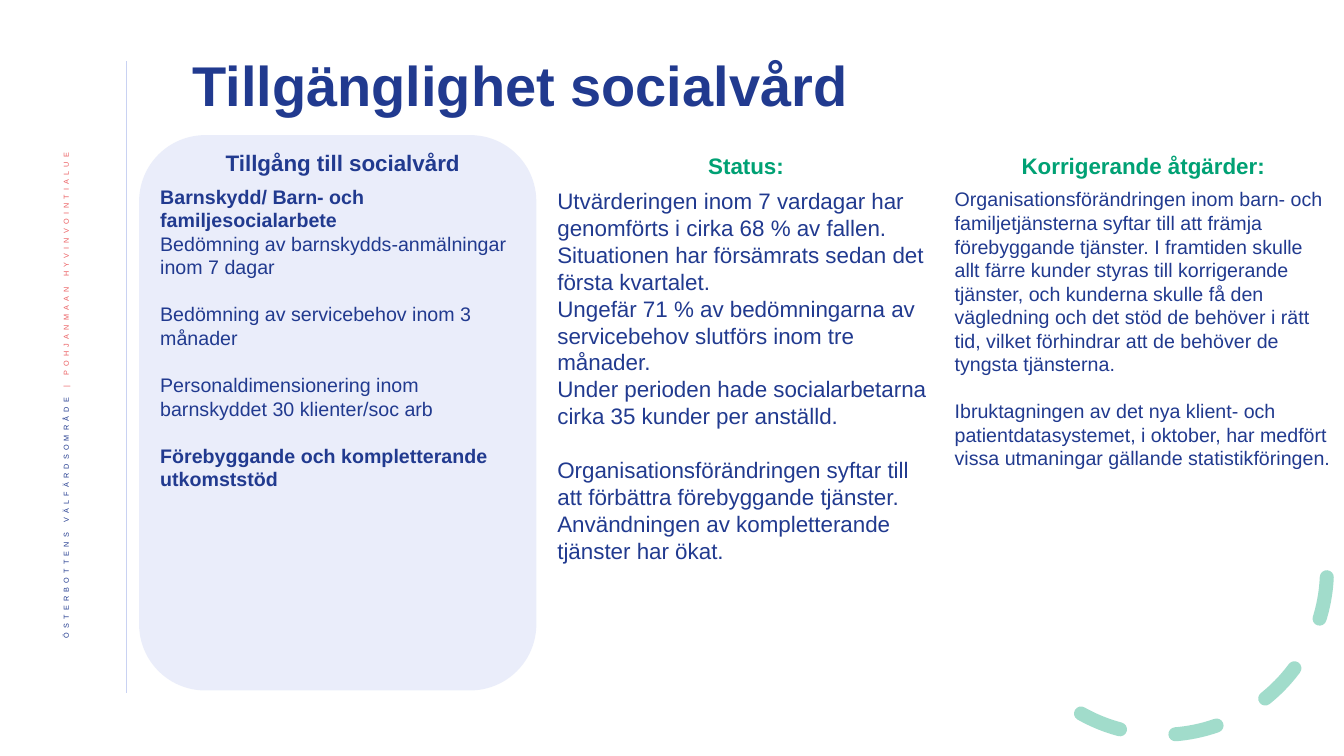
"""Build the slide on access to social care."""
import pptx
import pptx.util
import pptx.dml.color
import pptx.enum.dml
import pptx.enum.shapes
import pptx.enum.text
import pptx.oxml.ns
import lxml.etree

WIDTH, HEIGHT = 13.33, 7.5
NAVY, GREEN, CORAL, LAVENDER = "213A8F", "00A174", "EB5C5F", "C9D2F2"
ALIGN = pptx.enum.text.PP_ALIGN
ANCHOR = pptx.enum.text.MSO_ANCHOR
SHAPES = pptx.enum.shapes.MSO_SHAPE

TITLE = "Tillgänglighet socialvård"
SIDE_LABEL = [("ÖSTERBOTTENS VÄLFÄRDSOMRÅDE ", NAVY), ("| POHJANMAAN HYVINVOINTIALUE", CORAL)]
COLUMN_LEFT, COLUMN_TOP, COLUMN_WIDTH = 1.49, 1.46, 3.94
COLUMNS = [
    {
        "heading": "Tillgång till socialvård", "color": NAVY, "spacing": 0.9,
        "size": 14, "width": 3.82, "height": 3.73,
        "body": [
            ("Barnskydd/ Barn- och familjesocialarbete", "bold"),
            ("Bedömning av barnskydds-anmälningar inom 7 dagar", ""),
            ("Bedömning av servicebehov inom 3 månader", "gap"),
            ("Personaldimensionering inom barnskyddet 30 klienter/soc arb", "gap"),
            ("Förebyggande och kompletterande utkomststöd", "bold gap"),
        ],
    },
    {
        "heading": "Status:", "color": GREEN, "spacing": 1.0,
        "size": 16, "width": COLUMN_WIDTH, "height": 4.22,
        "body": [
            ("Utvärderingen inom 7 vardagar har genomförts i cirka 68 % av fallen. "
             "Situationen har försämrats sedan det första kvartalet.", ""),
            ("Ungefär 71 % av bedömningarna av servicebehov slutförs inom tre månader.", ""),
            ("Under perioden hade socialarbetarna cirka 35 kunder per anställd.", ""),
            ("Organisationsförändringen syftar till att förbättra förebyggande tjänster. "
             "Användningen av kompletterande tjänster har ökat.", "gap"),
        ],
    },
    {
        "heading": "Korrigerande åtgärder:", "color": GREEN, "spacing": 1.0,
        "size": 14, "width": COLUMN_WIDTH, "height": 3.28,
        "body": [
            ("Organisationsförändringen inom barn- och familjetjänsterna syftar till att främja "
             "förebyggande tjänster. I framtiden skulle allt färre kunder styras till korrigerande "
             "tjänster, och kunderna skulle få den vägledning och det stöd de behöver i rätt tid, "
             "vilket förhindrar att de behöver de tyngsta tjänsterna.", ""),
            ("Ibruktagningen av det nya klient- och patientdatasystemet, i oktober, har medfört "
             "vissa utmaningar gällande statistikföringen.", "gap"),
        ],
    },
]


def inches(*lengths):
    """Convert lengths in inches."""
    return [pptx.util.Inches(length) for length in lengths]


def rgb(color):
    """Turn a hex string into a colour."""
    return pptx.dml.color.RGBColor.from_string(color)


def add_run(paragraph, text, size=14, color=NAVY, bold=False):
    """Add a formatted run to a paragraph."""
    run = paragraph.add_run()
    run.text = text
    run.font.name = "Arial"
    run.font.size = pptx.util.Pt(size)
    run.font.bold = bold
    run.font.color.rgb = rgb(color)
    return run


def add_text(frame, text, align=ALIGN.LEFT, spacing=1.0, before=0, after=0, **font):
    """Write a paragraph, using the first one while the frame is empty."""
    paragraph = frame.add_paragraph() if frame.text else frame.paragraphs[0]
    paragraph.alignment = align
    paragraph.line_spacing = spacing
    paragraph.space_before = pptx.util.Pt(before)
    paragraph.space_after = pptx.util.Pt(after)
    add_run(paragraph, text, **font)


def set_alpha(shape, percent):
    """Make the first colour of a shape partly transparent."""
    color = next(shape._element.spPr.iter(pptx.oxml.ns.qn("a:srgbClr")))
    alpha = lxml.etree.SubElement(color, pptx.oxml.ns.qn("a:alpha"))
    alpha.set("val", str(percent * 1000))


def add_divider(slide):
    """Draw the thin vertical line beside the content."""
    divider = slide.shapes.add_connector(
        pptx.enum.shapes.MSO_CONNECTOR.STRAIGHT, *inches(1.25, 0.61, 1.25, 6.88))
    divider.line.color.rgb = rgb(LAVENDER)
    divider.line.width = pptx.util.Pt(0.5)
    lxml.etree.SubElement(divider._element.spPr, pptx.oxml.ns.qn("a:effectLst"))


def add_side_label(slide):
    """Write the vertical organisation name."""
    frame = slide.shapes.add_textbox(*inches(0.42, 1.42, 0.52, 5.73)).text_frame
    frame.word_wrap = True
    frame.vertical_anchor = ANCHOR.MIDDLE
    frame._txBody.bodyPr.set("vert", "vert270")
    paragraph = frame.paragraphs[0]
    paragraph.alignment = ALIGN.RIGHT
    paragraph.line_spacing = 0.9
    for text, color in SIDE_LABEL:
        properties = add_run(paragraph, text, size=9, color=color)._r.get_or_add_rPr()
        properties.set("baseline", "30000")
        properties.set("spc", "300")


def add_dashed_arc(slide):
    """Draw the dashed arc in the lower right corner."""
    arc = slide.shapes.add_shape(SHAPES.ARC, *inches(9.89, 4.02, 3.27, 3.27))
    arc.shadow.inherit = False
    arc.rotation = 98.9
    arc.adjustments[0], arc.adjustments[1] = 158.17, 17.81
    arc.fill.background()
    arc.line.color.rgb = rgb(GREEN)
    arc.line.width = pptx.util.Pt(10)
    arc.line.dash_style = pptx.enum.dml.MSO_LINE.DASH
    arc.line._get_or_add_ln().set("cap", "rnd")
    set_alpha(arc, 36)


def add_title(slide):
    """Place and format the title."""
    title = slide.shapes.title
    title.left, title.top, title.width, title.height = inches(1.81, 0.45, 10.2, 0.85)
    title.text_frame.vertical_anchor = ANCHOR.MIDDLE
    add_text(title.text_frame, TITLE, spacing=0.9, size=40, bold=True)


def add_panel(slide):
    """Draw the pale panel behind the first column."""
    panel = slide.shapes.add_shape(
        SHAPES.ROUNDED_RECTANGLE, *inches(1.38, 1.34, COLUMN_WIDTH, 5.51))
    panel.shadow.inherit = False
    panel.fill.solid()
    panel.fill.fore_color.rgb = rgb(LAVENDER)
    panel.line.fill.background()
    set_alpha(panel, 38)


def add_column(slide, index, column):
    """Write one column with its heading and body."""
    left = COLUMN_LEFT + index * COLUMN_WIDTH
    box = slide.shapes.add_textbox(*inches(left, COLUMN_TOP, column["width"], column["height"]))
    frame = box.text_frame
    frame.word_wrap = True
    add_text(frame, column["heading"], align=ALIGN.CENTER, spacing=column["spacing"],
             after=6, size=16, color=column["color"], bold=True)
    for text, style in column["body"]:
        gap = column["size"] * 1.2 if "gap" in style else 0
        add_text(frame, text, before=gap, size=column["size"], bold="bold" in style)


def main():
    """Build and save the presentation."""
    presentation = pptx.Presentation()
    presentation.slide_width, presentation.slide_height = inches(WIDTH, HEIGHT)
    slide = presentation.slides.add_slide(presentation.slide_layouts[5])
    add_divider(slide)
    add_side_label(slide)
    add_dashed_arc(slide)
    add_title(slide)
    add_panel(slide)
    for index, column in enumerate(COLUMNS):
        add_column(slide, index, column)
    presentation.save("out.pptx")


if __name__ == "__main__":
    main()
